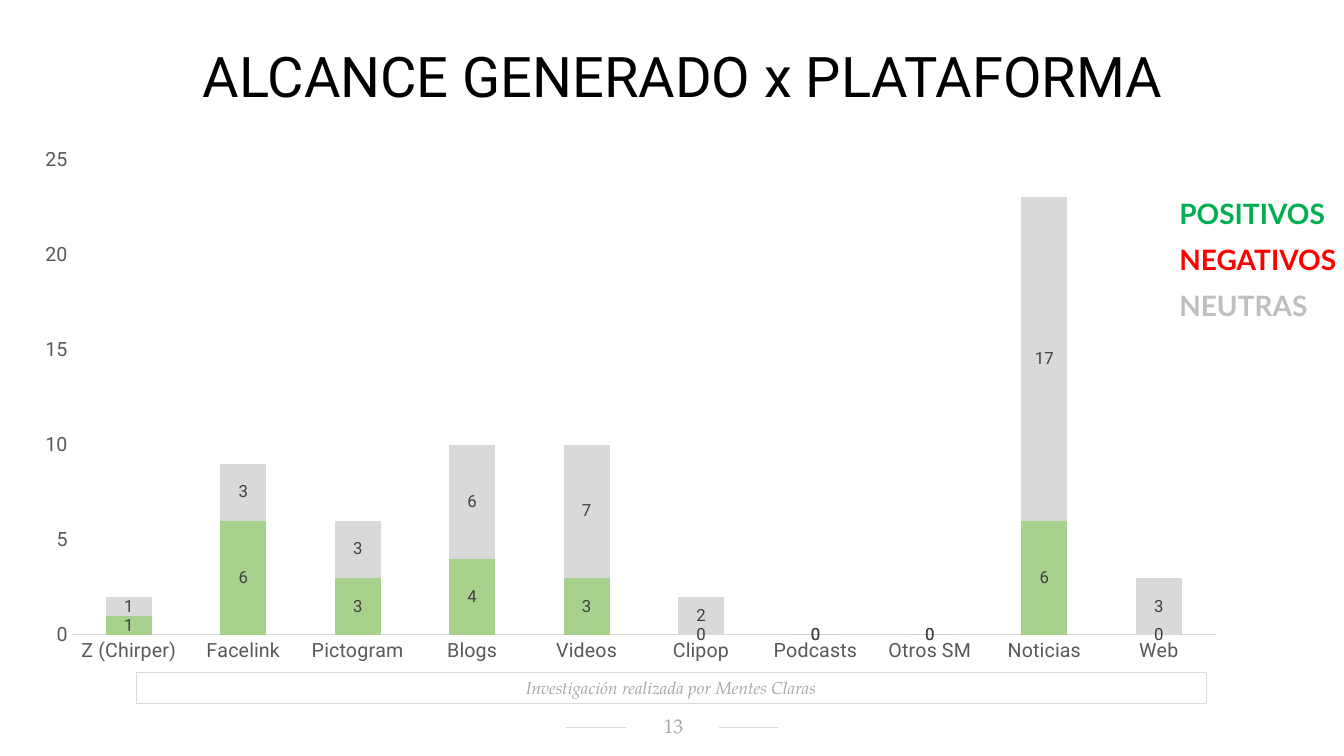
from lxml.etree import SubElement
from pptx import Presentation
from pptx.chart.data import CategoryChartData as Data
from pptx.dml.color import RGBColor as Rgb
from pptx.enum.chart import XL_CHART_TYPE as Kind
from pptx.enum.chart import XL_LABEL_POSITION as Spot
from pptx.enum.chart import XL_TICK_MARK as Tick
from pptx.enum.shapes import MSO_CONNECTOR as Link
from pptx.enum.shapes import MSO_SHAPE as Form
from pptx.enum.text import MSO_ANCHOR as Anchor
from pptx.enum.text import PP_ALIGN as Align
from pptx.oxml import parse_xml
from pptx.oxml.ns import nsdecls, qn
from pptx.util import Cm, Pt

HUES = {
    "black": "000000", "label": "404040", "axis": "595959",
    "muted": "A6A6A6", "rule": "D9D9D9",
    "pos": "A9D18E", "neg": "ED7D31", "neu": "D9D9D9",
    "good": "00B050", "bad": "FF0000", "plain": "BFBFBF",
}
SANS = "Roboto"
SERIF = "TeX Gyre Pagella"
NAMES = ["Z (Chirper)", "Facelink", "Pictogram", "Blogs", "Videos",
         "Clipop", "Podcasts", "Otros SM", "Noticias", "Web"]
SERIES = [
    ("Series 1", "pos", [1, 6, 3, 4, 3, 0, 0, 0, 6, 0], True),
    ("Series 2", "neg", [0] * len(NAMES), False),
    ("Series 3", "neu", [1, 3, 3, 6, 7, 2, 0, 0, 17, 3], True),
]
LEGEND = [("POSITIVOS", "good"), ("NEGATIVOS", "bad"), ("NEUTRAS", "plain")]


def color(key):
    return Rgb.from_string(HUES[key])


def style(font, face, size, key, bold=False, slant=False):
    font.name = face
    font.size = Pt(size)
    font.color.rgb = color(key)
    font.bold = bold
    font.italic = slant


def write(shape, text, look, pad, align=Align.CENTER,
          anchor=Anchor.MIDDLE, indent=0, space=None):
    frame = shape.text_frame
    frame.word_wrap = True
    frame.vertical_anchor = anchor
    (frame.margin_left, frame.margin_top,
     frame.margin_right, frame.margin_bottom) = map(Cm, pad)
    para = frame.paragraphs[0]
    para.alignment = align
    para.line_spacing = space
    if indent:
        props = para._p.get_or_add_pPr()
        props.set("marL", str(Cm(indent)))
        props.set("indent", "0")
    run = para.add_run()
    run.text = text
    style(run.font, *look)


def add_box(slide, form, area, line=None):
    box = slide.shapes.add_shape(form, *map(Cm, area))
    box.shadow.inherit = False
    box.fill.background()
    if line:
        box.line.color.rgb = color(line)
        box.line.width = Pt(0.75)
    else:
        box.line.fill.background()
    return box


def add_text(slide, area):
    return slide.shapes.add_textbox(*map(Cm, area))


def add_rule(slide, left, top, width):
    rule = slide.shapes.add_connector(
        Link.STRAIGHT, Cm(left), Cm(top), Cm(left + width), Cm(top))
    rule.line.color.rgb = color("rule")
    rule.line.width = Pt(0.5)
    SubElement(rule._element.spPr, qn("a:effectLst"))


def set_axis(axis):
    axis.has_major_gridlines = False
    axis.major_tick_mark = Tick.NONE
    axis.minor_tick_mark = Tick.NONE
    style(axis.tick_labels.font, SANS, 14, "axis")


def place_plot(chart, x, y, w, h):
    area = chart._chartSpace.chart.plotArea
    for old in area.findall(qn("c:layout")):
        area.remove(old)
    sizes = "".join(f'<c:{tag} val="{val}"/>' for tag, val in
                    zip("xywh", (x, y, w, h)))
    area.insert(0, parse_xml(
        f'<c:layout {nsdecls("c")}><c:manualLayout>'
        '<c:layoutTarget val="inner"/>'
        '<c:xMode val="edge"/><c:yMode val="edge"/>'
        f'{sizes}</c:manualLayout></c:layout>'
        .replace("<c:x ", "<c:x ").replace("<c:y ", "<c:y ")))


def add_bars(slide, area):
    data = Data()
    data.categories = NAMES
    for name, key, vals, shown in SERIES:
        data.add_series(name, vals)
    chart = slide.shapes.add_chart(
        Kind.COLUMN_STACKED, *map(Cm, area), data).chart
    chart.has_legend = False
    chart.has_title = False
    style(chart.font, "Calibri", 10, "black")
    plot = chart.plots[0]
    plot.gap_width = 150
    plot.overlap = 100
    plot.vary_by_categories = False
    for bars, (name, key, vals, shown) in zip(plot.series, SERIES):
        bars.format.fill.solid()
        bars.format.fill.fore_color.rgb = color(key)
        if shown:
            labels = bars.data_labels
            labels.show_value = True
            labels.position = Spot.CENTER
            style(labels.font, SANS, 12, "label")
    for axis in (chart.category_axis, chart.value_axis):
        set_axis(axis)
    base = chart.category_axis.format.line
    base.color.rgb = color("rule")
    base.width = Pt(0.75)
    scale = chart.value_axis
    scale.minimum_scale, scale.maximum_scale = 0, 25
    scale.major_unit = 5
    scale.format.line.fill.background()
    place_plot(chart, 0.04, 0.04, 0.94, 0.89)


def main():
    deck = Presentation()
    deck.slide_width, deck.slide_height = Cm(33.87), Cm(19.05)
    slide = deck.slides.add_slide(deck.slide_layouts[6])
    for left in (14.27, 18.11):
        add_rule(slide, left, 18.34, 1.5)
    title = add_box(slide, Form.ROUNDED_RECTANGLE, (0, 0.89, 33.87, 2.03))
    title.adjustments[0] = 0
    write(title, "ALCANCE GENERADO x PLATAFORMA", (SANS, 40, "black"),
          (0.33, 0.18, 0.33, 0.18), anchor=Anchor.BOTTOM, indent=0.53)
    add_bars(slide, (0.58, 3.48, 30.68, 13.46))
    page = add_text(slide, (15.75, 18.03, 2.39, 0.58))
    write(page, "13", (SERIF, 14.1, "muted"), (0.3, 0.05, 0.25, 0.13))
    credit = add_box(slide, Form.RECTANGLE, (3.43, 16.94, 26.97, 0.79), "rule")
    write(credit, "Investigación realizada por Mentes Claras",
          (SERIF, 12.3, "muted", False, True), (0.25, 0.13, 0.25, 0.13))
    for row, (text, key) in enumerate(LEGEND):
        item = add_text(slide, (29.31, 4.93 + 1.16 * row, 5.46, 1.04))
        write(item, text, ("Lato", 20, key, True), (0.36, 0.18, 0.36, 0.18),
              align=Align.LEFT, indent=0.05, space=0.8)
    deck.save("out.pptx")


if __name__ == "__main__":
    main()
